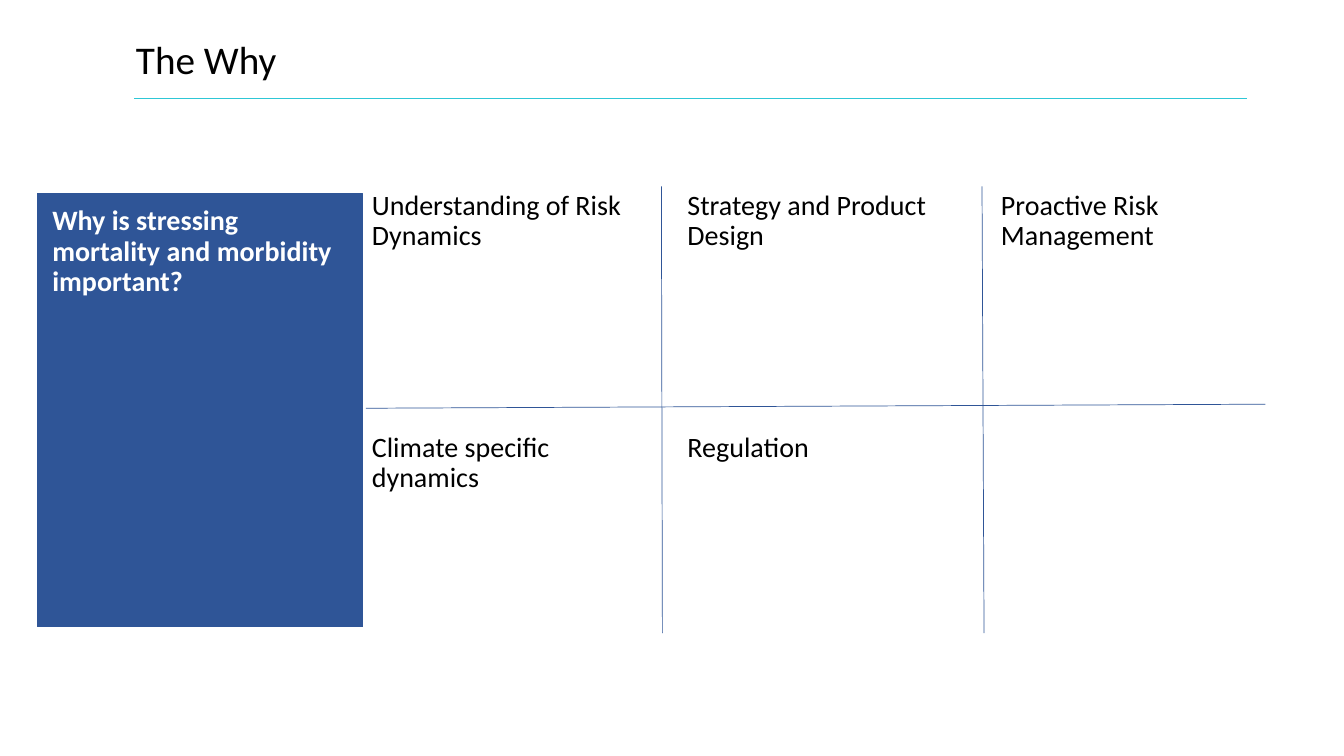
"""Build the slide "The Why": a question panel beside a grid of reasons."""
from pptx import Presentation
from pptx.dml.color import RGBColor
from pptx.enum import shapes, text
from pptx.oxml import ns
from pptx.util import Inches, Pt
from lxml import etree

BLUE = RGBColor(0x2F, 0x55, 0x97)
TEAL = RGBColor(0x2E, 0xC7, 0xD6)
BLACK = RGBColor(0, 0, 0)
WHITE = RGBColor(0xFF, 0xFF, 0xFF)


def add_text(slide, words, left, top, width, height, size=20, color=BLACK, bold=False):
    box = slide.shapes.add_textbox(Inches(left), Inches(top), Inches(width), Inches(height))
    frame = box.text_frame
    frame.word_wrap = True
    frame.vertical_anchor = text.MSO_ANCHOR.TOP
    paragraph = frame.paragraphs[0]
    paragraph.text = words
    paragraph.line_spacing = 0.9
    font = paragraph.font
    font.name, font.size, font.bold = "Calibri", Pt(size), bold
    font.color.rgb = color


def add_line(slide, x1, y1, x2, y2, color=BLUE):
    line = slide.shapes.add_connector(
        shapes.MSO_CONNECTOR.STRAIGHT, Inches(x1), Inches(y1), Inches(x2), Inches(y2))
    line.line.color.rgb = color
    line.line.width = Pt(0.5)
    etree.SubElement(line._element.spPr, ns.qn("a:effectLst"))


presentation = Presentation()
presentation.slide_width = Inches(13.33)
presentation.slide_height = Inches(7.5)
slide = presentation.slides.add_slide(presentation.slide_layouts[6])

add_line(slide, 1.33, 0.98, 12.37, 0.98, color=TEAL)
add_text(slide, "The Why", 1.25, 0.35, 11.12, 0.78, size=28)

panel = slide.shapes.add_shape(
    shapes.MSO_SHAPE.RECTANGLE, Inches(0.37), Inches(1.92), Inches(3.23), Inches(4.3))
panel.shadow.inherit = False
panel.fill.solid()
panel.fill.fore_color.rgb = BLUE
panel.line.color.rgb = BLUE
panel.line.width = Pt(0.75)
add_text(slide, "Why is stressing mortality and morbidity important?",
         0.42, 2, 3.11, 1.01, color=WHITE, bold=True)

column_lefts = (3.59, 6.72, 9.83)
reason_rows = (
    (1.85, ("Understanding of Risk Dynamics", "Strategy and Product Design",
            "Proactive Risk Management")),
    (4.25, ("Climate specific dynamics", "Regulation")),
)
for top, reasons in reason_rows:
    for left, reason in zip(column_lefts, reasons):
        add_text(slide, reason, left, top, 3.03, 0.83)

for divider in ((6.56, 1.85, 6.57, 6.28), (9.74, 1.85, 9.76, 6.28), (3.63, 4.05, 12.55, 4.01)):
    add_line(slide, *divider)

presentation.save("out.pptx")
